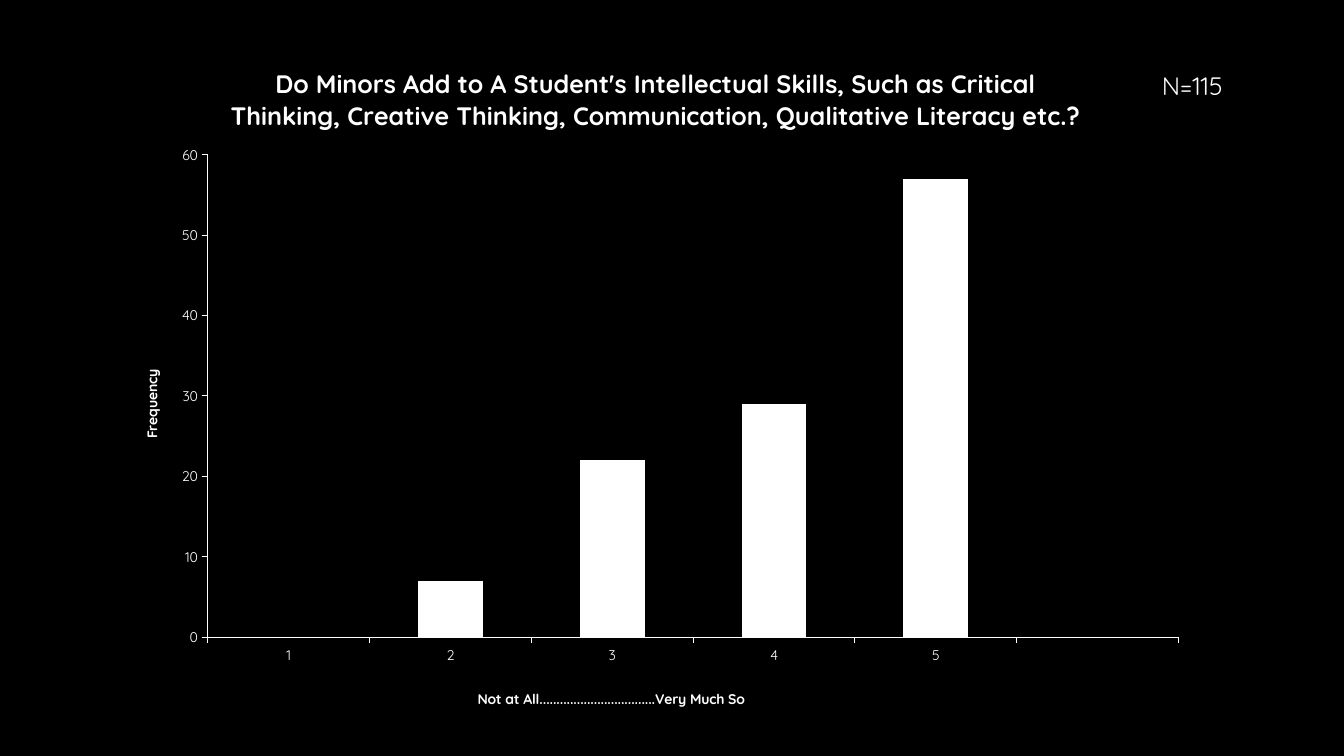
from dataclasses import dataclass
from typing import Any

import pptx
import pptx.chart.data
import pptx.dml.color
import pptx.enum.chart
import pptx.enum.text
import pptx.oxml
import pptx.oxml.ns
import pptx.util
from pptx.util import Cm, Pt

FONT = "Quicksand"
WHITE = "FFFFFF"
BLACK = "000000"


@dataclass
class Heading:
    """A chart or axis title, placed by fractions of the chart area."""
    owner: Any
    text: str
    size: float
    left: float
    top: float


def color(value: str) -> pptx.dml.color.RGBColor:
    return pptx.dml.color.RGBColor.from_string(value)


def set_font(font: Any, size: float, bold: bool = False) -> None:
    for name, value in {"name": FONT, "size": Pt(size), "bold": bold}.items():
        setattr(font, name, value)
    font.color.rgb = color(WHITE)


def place(element: Any, **sizes: float) -> None:
    """Fill a c:layout element with a manual position."""
    values = {"xMode": "edge", "yMode": "edge", **sizes}
    if "w" in sizes:
        values = {"layoutTarget": "inner", **values}
    manual = pptx.oxml.parse_xml(
        f"<c:manualLayout {pptx.oxml.ns.nsdecls('c')}>"
        + "".join(f'<c:{name} val="{value}"/>' for name, value in values.items())
        + "</c:manualLayout>")
    for child in list(element):
        element.remove(child)
    element.append(manual)


def add_heading(heading: Heading) -> None:
    owner = heading.owner
    title = owner.chart_title if hasattr(owner, "chart_title") else owner.axis_title
    para = title.text_frame.paragraphs[0]
    span = para.add_run()
    span.text = heading.text
    set_font(span.font, heading.size, bold=True)
    element = title.format.element if hasattr(title.format, "element") else title.element
    place(element.get_or_add_layout() if hasattr(element, "get_or_add_layout")
          else element.find(pptx.oxml.ns.qn("c:layout")),
          x=heading.left, y=heading.top)


def style_axis(axis: Any) -> None:
    settings = {
        "has_major_gridlines": False,
        "major_tick_mark": pptx.enum.chart.XL_TICK_MARK.OUTSIDE,
        "minor_tick_mark": pptx.enum.chart.XL_TICK_MARK.NONE,
    }
    for name, value in settings.items():
        setattr(axis, name, value)
    axis.format.line.color.rgb = color(WHITE)
    axis.format.line.width = Pt(0.75)
    set_font(axis.tick_labels.font, 10)


def add_survey_chart(page: Any) -> None:
    # Data
    data = pptx.chart.data.CategoryChartData()
    data.categories = ["1", "2", "3", "4", "5", " "]
    data.add_series("Series 1", [0, 7, 22, 29, 57, 0])
    chart = page.shapes.add_chart(
        pptx.enum.chart.XL_CHART_TYPE.COLUMN_CLUSTERED,
        Cm(2.97), Cm(1.02), Cm(27.28), Cm(17.15), data).chart
    chart.has_legend = False
    set_font(chart.font, 10)

    # Columns
    plot = chart.plots[0]
    plot.gap_width = 150
    plot.vary_by_categories = False
    fill = plot.series[0].format.fill
    fill.solid()
    fill.fore_color.rgb = color(WHITE)

    # Axes
    style_axis(chart.category_axis)
    style_axis(chart.value_axis)
    for name, value in {"minimum_scale": 0, "maximum_scale": 60, "major_unit": 10}.items():
        setattr(chart.value_axis, name, value)

    # Titles
    question = ("Do Minors Add to A Student's Intellectual Skills, Such as Critical "
                "Thinking, Creative Thinking, Communication, Qualitative Literacy etc.?")
    for heading in (
        Heading(chart, question, 18, 0.1, 0.03),
        Heading(chart.category_axis, "Not at All" + "." * 34 + "Very Much So", 10, 0.33, 0.95),
        Heading(chart.value_axis, "Frequency", 10, 0.02, 0.48),
    ):
        add_heading(heading)

    # Plot area
    area = chart.element.find(".//" + pptx.oxml.ns.qn("c:plotArea"))
    layout = area.find(pptx.oxml.ns.qn("c:layout"))
    if layout is None:
        layout = pptx.oxml.parse_xml(f"<c:layout {pptx.oxml.ns.nsdecls('c')}/>")
        area.insert(0, layout)
    place(layout, x=0.083, y=0.168, w=0.897, h=0.709)


def add_sample_size(page: Any) -> None:
    box = page.shapes.add_textbox(Cm(29.03), Cm(1.65), Cm(2.44), Cm(1.02))
    settings = {"word_wrap": False,
                "auto_size": pptx.enum.text.MSO_AUTO_SIZE.SHAPE_TO_FIT_TEXT}
    for name, value in settings.items():
        setattr(box.text_frame, name, value)
    span = box.text_frame.paragraphs[0].add_run()
    span.text = "N=115"
    set_font(span.font, 18)


def main() -> None:
    deck = pptx.Presentation()
    deck.slide_width, deck.slide_height = Cm(33.87), Cm(19.05)
    page = deck.slides.add_slide(deck.slide_layouts[6])
    page.background.fill.solid()
    page.background.fill.fore_color.rgb = color(BLACK)
    add_survey_chart(page)
    add_sample_size(page)
    deck.save("out.pptx")


if __name__ == "__main__":
    main()
